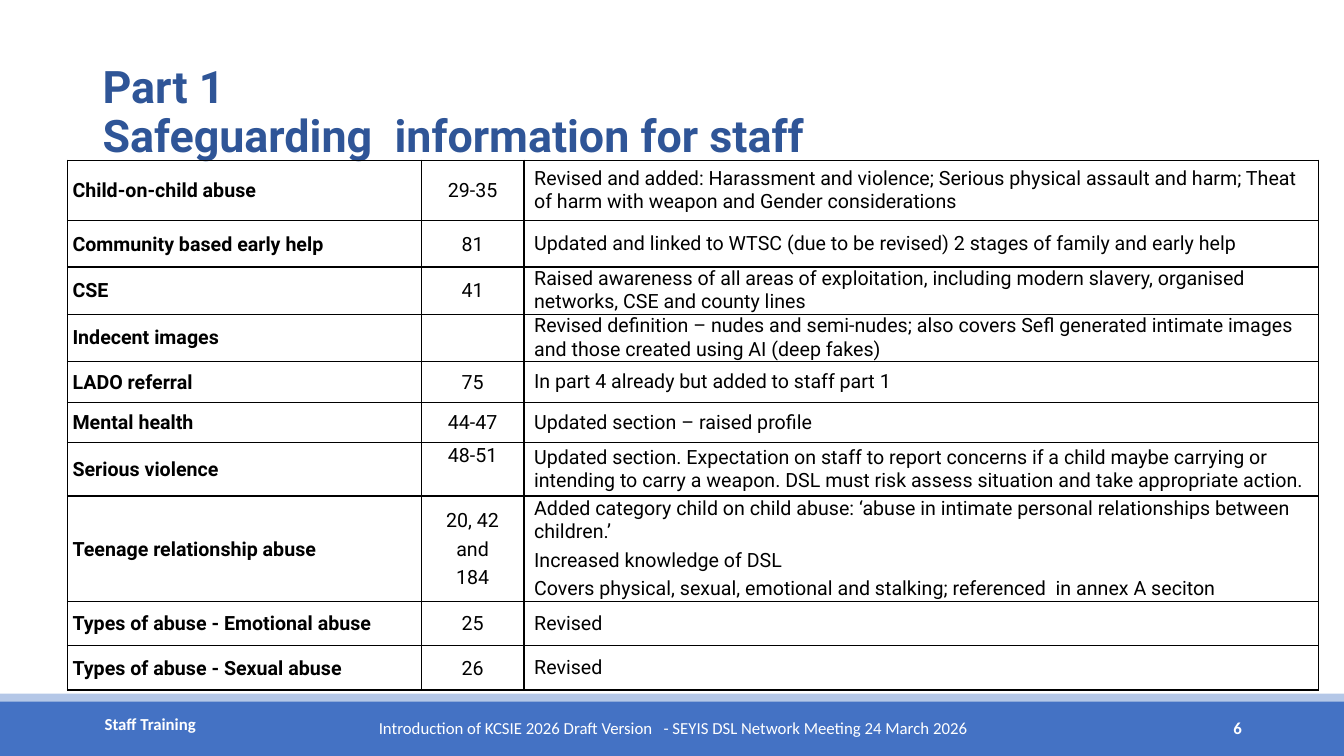
from pptx import Presentation
from pptx.dml.color import RGBColor
from pptx.enum.shapes import MSO_SHAPE as Shape
from pptx.enum.text import MSO_ANCHOR as Anchor, PP_ALIGN as Align
from pptx.oxml import parse_xml
from pptx.oxml.ns import nsdecls
from pptx.util import Pt

WHITE = RGBColor(0xFF, 0xFF, 0xFF)
BLACK = RGBColor(0, 0, 0)
NAVY = RGBColor(0x2F, 0x55, 0x97)
BLUE = RGBColor(0x44, 0x72, 0xC4)
PALE_BLUE = RGBColor(0xB4, 0xC7, 0xE7)

COLUMN_WIDTHS = (252.7, 73.5, 567.4)
# Topic, paragraph numbers, changes, row height
ROWS = [
    ("Child-on-child abuse", ["29-35"],
     ["Revised and added: Harassment and violence; Serious physical assault and harm; "
      "Theat of harm with weapon and Gender considerations"], 43.2),
    ("Community based early help", ["81"],
     ["Updated and linked to WTSC (due to be revised) 2 stages of family and early help"], 33.1),
    ("CSE", ["41"],
     ["Raised awareness of all areas of exploitation, including modern slavery, organised "
      "networks, CSE and county lines"], 33.1),
    ("Indecent images", [],
     ["Revised definition – nudes and semi-nudes; also covers Sefl generated intimate images "
      "and those created using AI (deep fakes)"], 33.1),
    ("LADO referral", ["75"], ["In part 4 already but added to staff part 1"], 29.5),
    ("Mental health", ["44-47"], ["Updated section – raised profile"], 28.8),
    ("Serious violence", ["48-51"],
     ["Updated section. Expectation on staff to report concerns if a child maybe carrying or "
      "intending to carry a weapon. DSL must risk assess situation and take appropriate action."],
     37.9),
    ("Teenage relationship abuse", ["20, 42", "and", "184"],
     ["Added category child on child abuse: ‘abuse in intimate personal relationships between "
      "children.’",
      "Increased knowledge of DSL",
      "Covers physical, sexual, emotional and stalking; referenced  in annex A seciton"], 75.6),
    ("Types of abuse - Emotional abuse", ["25"], ["Revised"], 31.5),
    ("Types of abuse - Sexual abuse", ["26"], ["Revised"], 31.5),
]


def write(para, text, size=14, font="Roboto", color=BLACK, bold=False, align=Align.LEFT):
    para.text = text
    para.alignment = align
    para.font.size = Pt(size)
    para.font.name = font
    para.font.bold = bold
    para.font.color.rgb = color


class SlideBuilder:
    """Holds the current page and the style of its elements."""

    footer_style = {"size": 12, "font": "Calibri", "color": WHITE}

    def __init__(self, page):
        self.page = page

    def band(self, top, height, color):
        bar = self.page.shapes.add_shape(Shape.RECTANGLE, 0, Pt(top), Pt(960), Pt(height))
        bar.shadow.inherit = False
        bar.fill.solid()
        bar.fill.fore_color.rgb = color
        bar.line.fill.background()

    def text(self, text, left, top, width, height, wrap=True, anchor=Anchor.TOP,
             line_spacing=None, **style):
        box = self.page.shapes.add_textbox(Pt(left), Pt(top), Pt(width), Pt(height))
        frame = box.text_frame
        frame.word_wrap = wrap
        frame.vertical_anchor = anchor
        para = frame.paragraphs[0]
        write(para, text, **style)
        para.line_spacing = line_spacing

    def footer(self, text, *place, **style):
        self.text(text, *place, **self.footer_style, **style)

    def borders(self, cell):
        properties = cell._tc.get_or_add_tcPr()
        for index, side in enumerate(("lnL", "lnR", "lnT", "lnB")):
            properties.insert(index, parse_xml(
                f'<a:{side} {nsdecls("a")} w="12700"><a:solidFill>'
                f'<a:srgbClr val="{BLACK}"/></a:solidFill></a:{side}>'))

    def cell(self, cell, lines, margins, anchor=Anchor.MIDDLE, **style):
        cell.fill.background()
        self.borders(cell)
        cell.vertical_anchor = anchor
        cell.margin_left, cell.margin_right, cell.margin_top = map(Pt, margins)
        cell.margin_bottom = 0
        frame = cell.text_frame
        for index, line in enumerate(lines):
            para = frame.add_paragraph() if index else frame.paragraphs[0]
            write(para, line, **style)
            para.space_before = Pt(2 if index else 0)
            para.space_after = Pt(2)

    def table(self, rows, widths, left, top):
        height = sum(row[-1] for row in rows)
        grid = self.page.shapes.add_table(len(rows), len(widths), Pt(left), Pt(top),
                                          Pt(sum(widths)), Pt(height)).table
        grid.first_row = grid.horz_banding = False
        for column, width in zip(grid.columns, widths):
            column.width = Pt(width)
        for row, (topic, numbers, changes, row_height) in zip(grid.rows, rows):
            row.height = Pt(row_height)
            topic_cell, number_cell, change_cell = row.cells
            number_anchor = Anchor.TOP if topic == "Serious violence" else Anchor.MIDDLE
            self.cell(topic_cell, [topic], (3.6, 3.6, 0.7), bold=True)
            self.cell(number_cell, numbers, (3.6, 3.6, 0.7), number_anchor, align=Align.CENTER)
            self.cell(change_cell, changes, (7.2, 0, 0))


def main():
    deck = Presentation()
    deck.slide_width, deck.slide_height = Pt(960), Pt(540)
    slide = SlideBuilder(deck.slides.add_slide(deck.slide_layouts[6]))

    # Footer
    slide.band(500.4, 39.6, BLUE)
    slide.footer("Staff Training", 67.7, 506.2, 85, 21.6, wrap=False, bold=True)
    slide.footer("Introduction of KCSIE 2026 Draft Version   - SEYIS DSL Network Meeting 24 March 2026",
                 263.5, 509, 446.4, 21.6, wrap=False)
    slide.band(495.4, 5.8, PALE_BLUE)

    # Title
    slide.text("Part 1\vSafeguarding  information for staff", 66.2, 28.8, 828, 104.4,
               anchor=Anchor.MIDDLE, line_spacing=0.9, size=32, color=NAVY, bold=True)

    # Changes by topic
    slide.table(ROWS, COLUMN_WIDTHS, 48.2, 114.5)

    # Page number
    slide.footer("6", 678.2, 505.4, 216, 28.8, anchor=Anchor.MIDDLE, bold=True, align=Align.RIGHT)

    deck.save("out.pptx")


if __name__ == "__main__":
    main()
